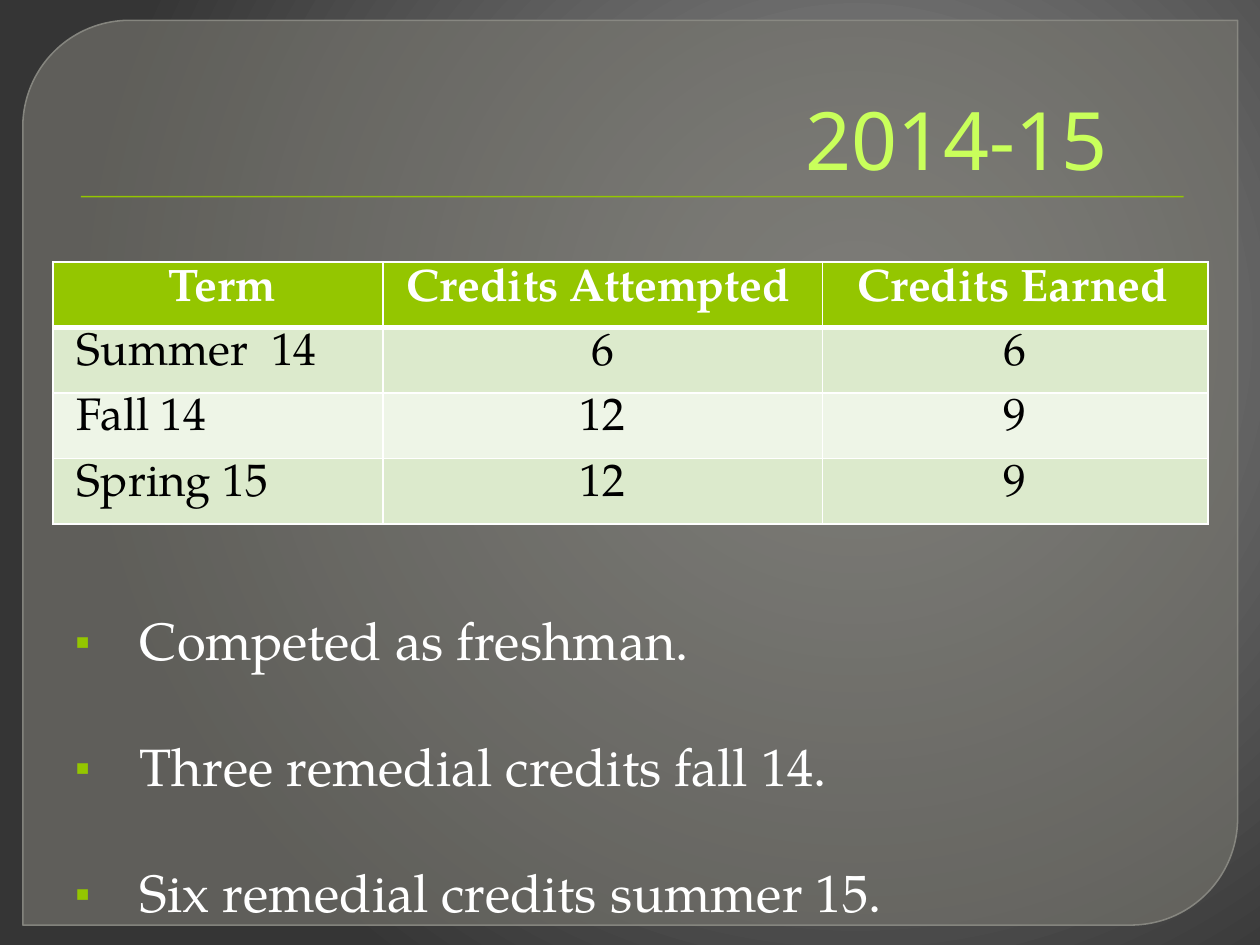
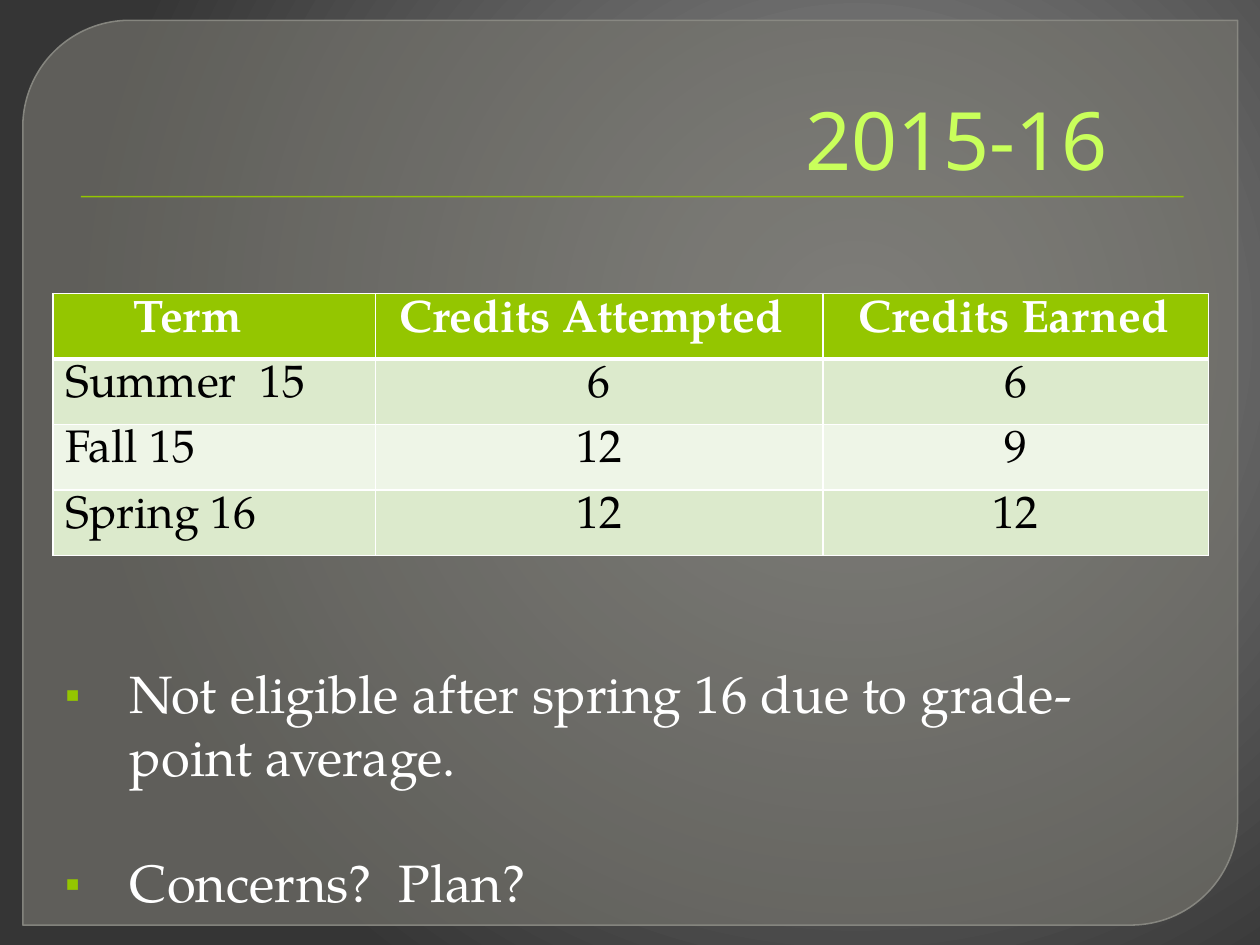
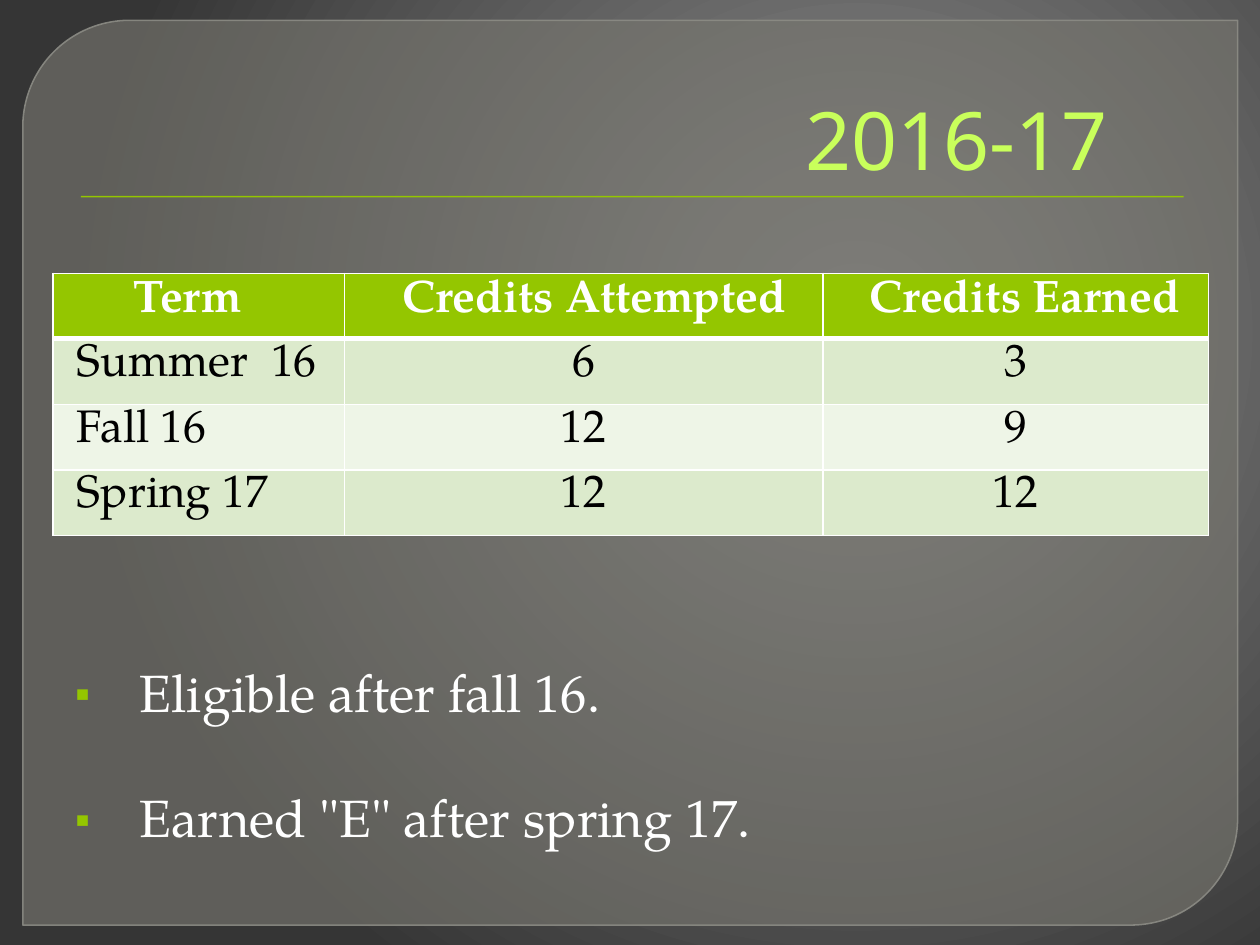
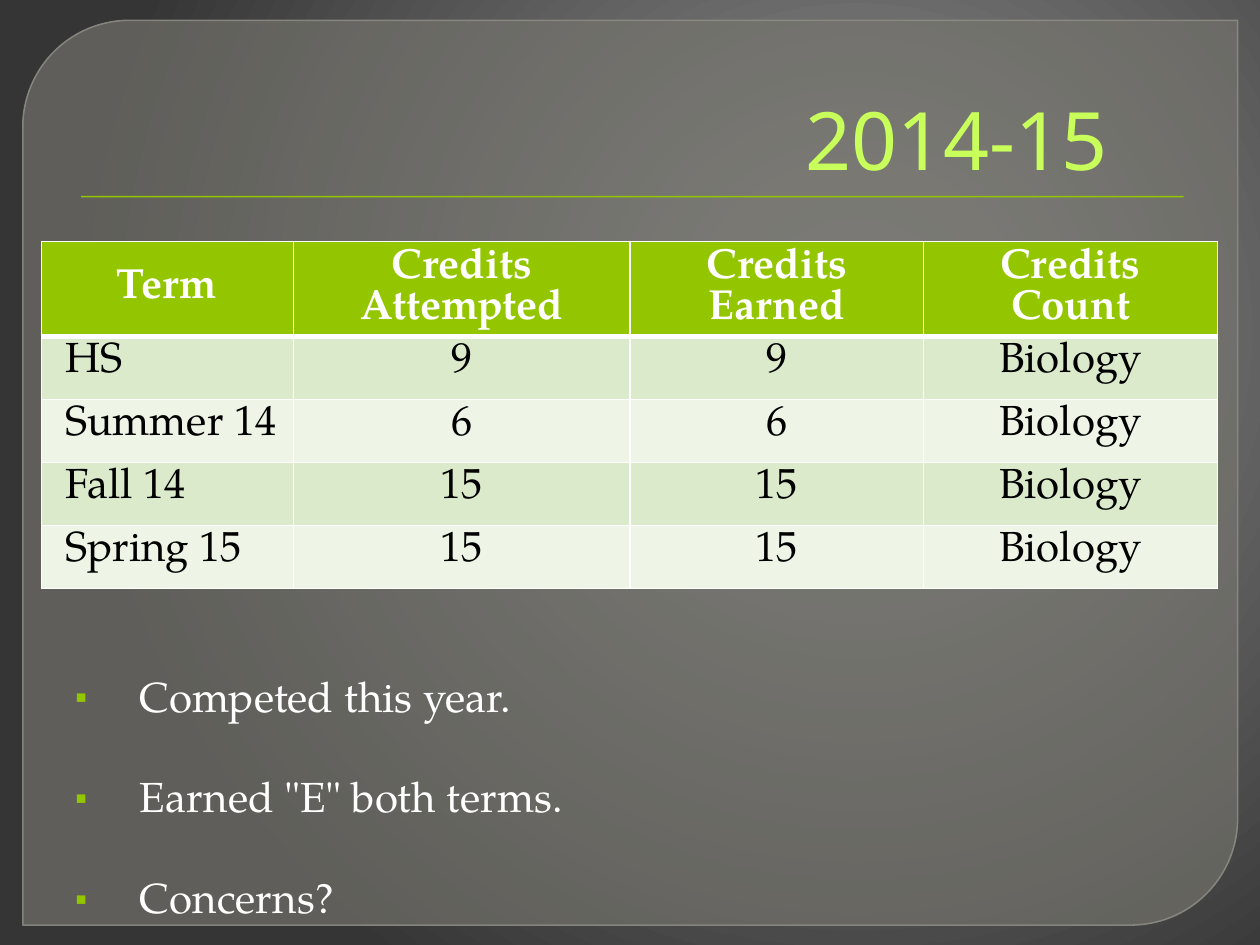
from lxml.etree import SubElement
from pptx import Presentation
from pptx.dml.color import RGBColor
from pptx.enum.shapes import MSO_SHAPE
from pptx.enum.text import MSO_ANCHOR, MSO_AUTO_SIZE, PP_ALIGN
from pptx.oxml import parse_xml
from pptx.oxml.ns import nsdecls, qn
from pptx.util import Cm, Pt

GREEN, LIME, WHITE, BLACK = "94C600", "C9FF5B", "FFFFFF", "000000"
BANDS = ["DCEACC", "EEF5E7"]
SERIF, SANS = "TeX Gyre Pagella", "Noto Sans"
HEAD = ["Term", "Credits Attempted", "Credits Earned"]

# Lengths in cm; indents count steps of one space width; None centres the cell
DECK = [
    {"title": "2014-15", "at": (1.07, 5.28), "cols": [6.65, 8.86, 7.77],
     "rows": [1.32] * 4, "table_size": 26, "head_indents": [9, 1, 2], "term_indent": 1,
     "cells": [HEAD, ["Summer  14", "6", "6"], ["Fall 14", "12", "9"],
               ["Spring 15", "12", "9"]],
     "body": (1.27, 11.43, 6.15), "body_top": 0.82, "body_size": 30,
     "points": ["Competed as freshman.", "Three remedial credits fall 14.",
                "Six remedial credits summer 15."]},
    {"title": "2015-16", "at": (1.07, 5.92), "cols": [6.5, 9.02, 7.77],
     "rows": [1.32] * 4, "table_size": 26, "head_indents": [6, 1, 2], "term_indent": 0,
     "cells": [HEAD, ["Summer  15", "6", "6"], ["Fall 15", "12", "9"],
               ["Spring 16", "12", "12"]],
     "body": (1.07, 12.07, 6.15), "body_top": 1.25, "body_size": 30,
     "points": ["Not eligible after spring 16 due to grade-point average.",
                "Concerns?  Plan?"]},
    {"title": "2016-17", "at": (1.07, 5.51), "cols": [5.87, 9.65, 7.77],
     "rows": [1.32] * 4, "table_size": 26, "head_indents": [6, 4, 3], "term_indent": 1,
     "cells": [HEAD, ["Summer  16", "6", "3"], ["Fall 16", "12", "9"],
               ["Spring 17", "12", "12"]],
     "body": (1.27, 11.86, 6.15), "body_top": 1.45, "body_size": 29.9,
     "points": ["Eligible after fall 16.", 'Earned "E" after spring 17.']},
    {"title": "2014-15", "at": (0.84, 4.87), "cols": [5.08, 6.78, 5.92, 5.92],
     "rows": [1.9] + [1.27] * 4, "table_size": 24,
     "head_indents": [5.5, None, None, None], "term_indent": 1,
     "cells": [HEAD + ["Credits Count"], ["HS", "9", "9", "Biology"],
               ["Summer 14", "6", "6", "Biology"], ["Fall 14", "15", "15", "Biology"],
               ["Spring 15", "15", "15", "Biology"]],
     "body": (1.27, 12.7, 5.28), "body_top": 0.81, "body_size": 24,
     "points": ["Competed this year.", 'Earned "E" both terms.', "Concerns?"]},
]


def rgb(code):
    return RGBColor.from_string(code)


def write(p, text, color, **font):
    r = p.add_run()
    r.text = text
    for name, value in font.items():
        setattr(r.font, name, value)
    r.font.color.rgb = rgb(color)


prs = Presentation()
prs.slide_width, prs.slide_height = Cm(25.4), Cm(19.05)
layout = prs.slide_layouts[5]

# Shared background
master = prs.slide_master
master.background.fill.solid()
bg = master.element.find(".//" + qn("p:bgPr"))
stops = "".join(f'<a:gs pos="{pos}000"><a:srgbClr val="{c}"/></a:gs>'
                for pos, c in [(0, "8C8C8C"), (20, "7F7F7F"), (100, "353535")])
bg.replace(bg[0], parse_xml(
    f'<a:gradFill {nsdecls("a")} rotWithShape="1"><a:gsLst>{stops}</a:gsLst>'
    '<a:path path="circle"><a:fillToRect l="68000" t="35000" r="32000" b="65000"/>'
    '</a:path></a:gradFill>'))

# Shared panel and title rule, moved to the layout
for ph in list(layout.placeholders):
    if ph.placeholder_format.idx >= 10:
        ph.element.getparent().remove(ph.element)
slides = [prs.slides.add_slide(layout) for _ in DECK]
shapes = slides[0].shapes
panel = shapes.add_shape(MSO_SHAPE.ROUND_2_DIAG_RECTANGLE,
                         Cm(0.46), Cm(0.41), Cm(24.49), Cm(18.24))
panel.adjustments[0], panel.adjustments[1] = 0.118, 0
panel.fill.solid()
panel.fill.fore_color.rgb = rgb("76756E")
panel.line.color.rgb = rgb("8D8D86")
panel.line.width = Pt(0.87)
for clr, alpha in zip(panel.element.spPr.iter(qn("a:srgbClr")), ["65000", "88000"]):
    SubElement(clr, qn("a:alpha"), val=alpha)
rule = shapes.add_shape(MSO_SHAPE.RECTANGLE, Cm(1.63), Cm(3.95), Cm(22.23), Cm(0.03))
rule.fill.solid()
rule.fill.fore_color.rgb = rgb(GREEN)
rule.line.fill.background()
for i, sp in enumerate([panel, rule]):
    sp.shadow.inherit = False
    layout.shapes._spTree.insert(2 + i, sp.element)

for s, d in zip(slides, DECK):
    # Title
    title = s.shapes.title
    title.left, title.top, title.width, title.height = Cm(1.27), Cm(0.71), Cm(22.86), Cm(3.18)
    tf = title.text_frame
    for name, value in {"auto_size": MSO_AUTO_SIZE.NONE, "vertical_anchor": MSO_ANCHOR.BOTTOM,
                        "margin_right": Cm(1.8), "margin_bottom": Cm(0.13)}.items():
        setattr(tf, name, value)
    p = tf.paragraphs[0]
    p.alignment = PP_ALIGN.RIGHT
    write(p, d["title"], LIME, name=SANS, size=Pt(46))

    # Bullet points
    left, top, height = d["body"]
    tf = s.shapes.add_textbox(Cm(left), Cm(top), Cm(22.86), Cm(height)).text_frame
    tf.word_wrap = True
    tf.margin_top = Cm(d["body_top"])
    pitch = Pt(d["body_size"] * 1.2)
    for i, text in enumerate(d["points"]):
        p = tf.add_paragraph() if i else tf.paragraphs[0]
        p.line_spacing = pitch
        p.space_before = pitch if i else 0
        write(p, text, WHITE, name=SERIF, size=Pt(d["body_size"]))
        pPr = p._p.get_or_add_pPr()
        pPr.set("marL", str(Cm(1.3)))
        pPr.set("indent", str(-Cm(1.3)))
        SubElement(SubElement(pPr, qn("a:buClr")), qn("a:srgbClr"), val=GREEN)
        SubElement(pPr, qn("a:buSzPct"), val="70000")
        SubElement(pPr, qn("a:buFont"), typeface=SANS)
        SubElement(pPr, qn("a:buChar"), char="▪")

    # Credits table
    cells, cols, rows = d["cells"], d["cols"], d["rows"]
    table = s.shapes.add_table(len(rows), len(cols), Cm(d["at"][0]), Cm(d["at"][1]),
                               Cm(sum(cols)), Cm(sum(rows))).table
    for column, width in zip(table.columns, cols):
        column.width = Cm(width)
    for row, height in zip(table.rows, rows):
        row.height = Cm(height)
    for y, texts in enumerate(cells):
        indents = [d["term_indent"]] + [None] * (len(cols) - 1) if y else d["head_indents"]
        for x, (text, indent) in enumerate(zip(texts, indents)):
            cell = table.cell(y, x)
            cell.fill.solid()
            cell.fill.fore_color.rgb = rgb(BANDS[(y - 1) % 2] if y else GREEN)
            if len(cols) == 4 and x == y == 0:
                cell.vertical_anchor = MSO_ANCHOR.MIDDLE
            p = cell.text_frame.paragraphs[0]
            p.line_spacing = Pt(d["table_size"] * 0.98)
            if indent is None:
                p.alignment = PP_ALIGN.CENTER
            else:
                cell.margin_left = Cm(0.25 + 0.23 * indent)
            write(p, text, BLACK if y else WHITE, name=SERIF,
                  size=Pt(d["table_size"]), bold=y == 0)
            widths = {"lnL": 1, "lnR": 1, "lnT": 3 if y == 1 else 1, "lnB": 1 if y else 3}
            for i, (side, width) in enumerate(widths.items()):
                cell._tc.get_or_add_tcPr().insert(i, parse_xml(
                    f'<a:{side} {nsdecls("a")} w="{Pt(width)}"><a:solidFill>'
                    f'<a:srgbClr val="{WHITE}"/></a:solidFill></a:{side}>'))

prs.save("out.pptx")
